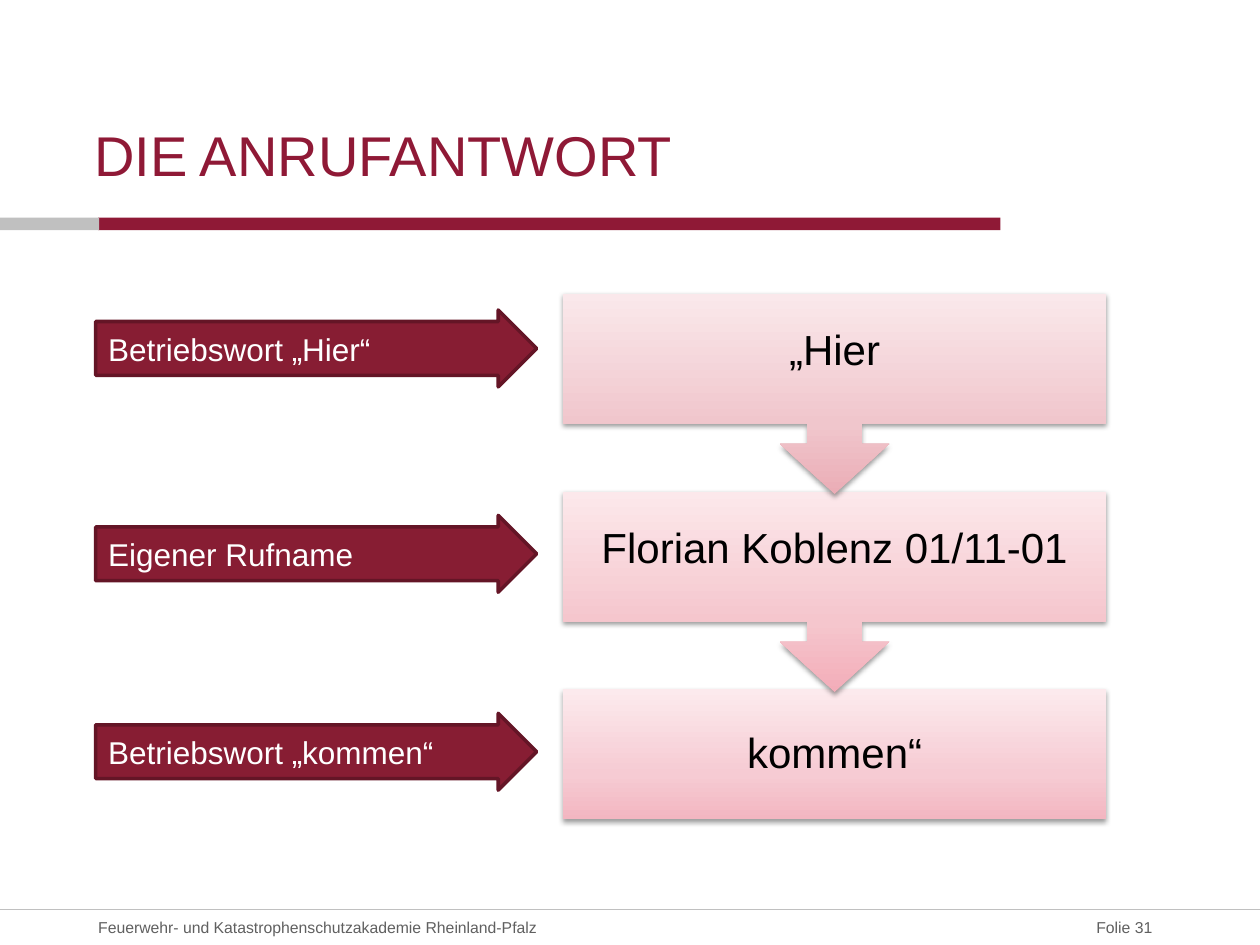
"""Build the slide on answering a radio call."""
from typing import NamedTuple

from lxml import etree
from pptx import Presentation
from pptx import util as u
from pptx.dml.color import RGBColor
from pptx.enum import shapes, text
from pptx.oxml import ns

FONT = "Arial"
RED, GREY, DARK = "8F1936", "C0C0C0", "606060"
BOX_LEFT, BOX_TOP, BOX_W, BOX_H, PITCH = 11.35, 5.92, 10.95, 2.62, 3.99
SHAFT_HALF, HEAD_HALF, SHAFT_LEN, ARROW_LEN = 0.55, 1.1, 0.41, 1.42


class Step(NamedTuple):
    label: str
    label_top: float
    spoken: str
    stops: tuple[str, str, str]


STEPS = [
    Step("Betriebswort „Hier“", 6.25, "„Hier", ("EBADB6", "F0C6CC", "FAE8EB")),
    Step("Eigener Rufname", 10.39, "Florian Koblenz 01/11-01", ("F3ADB9", "F5C6CD", "FCE8EB")),
    Step("Betriebswort „kommen“", 14.38, "kommen“", ("F3B6C1", "F6CBD3", "FCEAED")),
]


def rgb(value: str) -> RGBColor:
    return RGBColor.from_string(value)


def write(sp, content: str, size: float, color: str, align=text.PP_ALIGN.LEFT,
          anchor=text.MSO_ANCHOR.MIDDLE, insets=None, spacing=None) -> None:
    tf = sp.text_frame
    tf.word_wrap = True
    tf.vertical_anchor = anchor
    if insets is not None:
        tf.margin_left, tf.margin_top, tf.margin_right, tf.margin_bottom = map(u.Cm, insets)
    p = tf.paragraphs[0]
    p.alignment = align
    p.line_spacing = spacing
    r = p.add_run()
    r.text = content
    r.font.name, r.font.size = FONT, u.Pt(size)
    r.font.color.rgb = rgb(color)


def add_text(s, left: float, top: float, width: float, height: float,
             content: str, size: float, color: str, **style) -> None:
    sp = s.shapes.add_textbox(*map(u.Cm, (left, top, width, height)))
    write(sp, content, size, color, **{"insets": (0, 0, 0, 0), **style})


def add_solid(s, kind, left: float, top: float, width: float, height: float, fill: str):
    sp = s.shapes.add_shape(kind, *map(u.Cm, (left, top, width, height)))
    sp.shadow.inherit = False
    sp.fill.solid()
    sp.fill.fore_color.rgb = rgb(fill)
    sp.line.fill.background()
    return sp


def add_rule(s, y: float, width: float) -> None:
    line = s.shapes.add_connector(shapes.MSO_CONNECTOR.STRAIGHT, 0, u.Cm(y), u.Cm(width), u.Cm(y))
    line.line.color.rgb = rgb(GREY)
    line.line.width = u.Pt(0.75)
    etree.SubElement(line._element.spPr, ns.qn("a:effectLst"))


def add_gradient(sp, colors: tuple[str, str, str]) -> None:
    sp.fill.gradient()
    sp.fill.gradient_angle = 90
    gs_list = sp._element.spPr.find(ns.qn("a:gradFill")).find(ns.qn("a:gsLst"))
    for gs in list(gs_list):
        gs_list.remove(gs)
    for pos, color in zip((0, 35000, 100000), colors):
        gs = etree.SubElement(gs_list, ns.qn("a:gs"), pos=str(pos))
        etree.SubElement(gs, ns.qn("a:srgbClr"), val=color)


def add_shadow(sp) -> None:
    sp.shadow.inherit = False
    effects = sp._element.spPr.find(ns.qn("a:effectLst"))
    shadow = etree.SubElement(effects, ns.qn("a:outerShdw"), blurRad=str(u.Pt(3.1)),
                              dist=str(u.Pt(1.6)), dir="5400000", rotWithShape="0")
    color = etree.SubElement(shadow, ns.qn("a:srgbClr"), val="000000")
    etree.SubElement(color, ns.qn("a:alpha"), val="38000")


def add_spoken(s, step: Step, top: float, has_arrow: bool) -> None:
    right, bottom, mid = BOX_LEFT + BOX_W, top + BOX_H, BOX_LEFT + BOX_W / 2
    points = [(right, top), (right, bottom)]
    if has_arrow:
        neck = bottom + SHAFT_LEN
        points += [(mid + SHAFT_HALF, bottom), (mid + SHAFT_HALF, neck), (mid + HEAD_HALF, neck),
                   (mid, bottom + ARROW_LEN),
                   (mid - HEAD_HALF, neck), (mid - SHAFT_HALF, neck), (mid - SHAFT_HALF, bottom)]
    points.append((BOX_LEFT, bottom))
    fb = s.shapes.build_freeform(u.Cm(BOX_LEFT), u.Cm(top))
    fb.add_line_segments([(u.Cm(x), u.Cm(y)) for x, y in points], close=True)
    sp = fb.convert_to_shape()
    add_gradient(sp, step.stops)
    sp.line.fill.background()
    add_shadow(sp)
    write(sp, step.spoken, 24, "000000", text.PP_ALIGN.CENTER,
          insets=(0.71, 0.71, 0.71, 2.41 if has_arrow else 0.71), spacing=0.9)


def add_label(s, step: Step) -> None:
    sp = add_solid(s, shapes.MSO_SHAPE.RIGHT_ARROW, 1.93, step.label_top, 8.89, 1.55, "871D33")
    sp.adjustments[0], sp.adjustments[1] = 0.7, 0.5
    sp.line.color.rgb = rgb("641526")
    sp.line.width = u.Pt(2)
    write(sp, step.label, 18, "FFFFFF")


def main() -> None:
    prs = Presentation()
    prs.slide_width, prs.slide_height = u.Cm(25.4), u.Cm(19.05)
    s = prs.slides.add_slide(prs.slide_layouts[6])
    add_solid(s, shapes.MSO_SHAPE.RECTANGLE, 1.98, 4.39, 18.19, 0.25, RED)
    add_solid(s, shapes.MSO_SHAPE.RECTANGLE, 0, 4.39, 2, 0.25, GREY)
    add_rule(s, 18.34, 25.4)
    add_text(s, 20.17, 18.34, 3.23, 0.71, "Folie 31", 9, DARK,
             align=text.PP_ALIGN.RIGHT, insets=(0, 0, 0.17, 0))
    add_text(s, 1.98, 18.34, 14, 0.71,
             "Feuerwehr- und Katastrophenschutzakademie Rheinland-Pfalz", 9, DARK)
    add_text(s, 1.9, 1.22, 16.23, 2.57, "DIE ANRUFANTWORT", 32, RED,
             anchor=text.MSO_ANCHOR.BOTTOM)
    for i, step in reversed(list(enumerate(STEPS))):
        add_spoken(s, step, BOX_TOP + i * PITCH, i < len(STEPS) - 1)
    for step in STEPS:
        add_label(s, step)
    prs.save("out.pptx")


if __name__ == "__main__":
    main()
